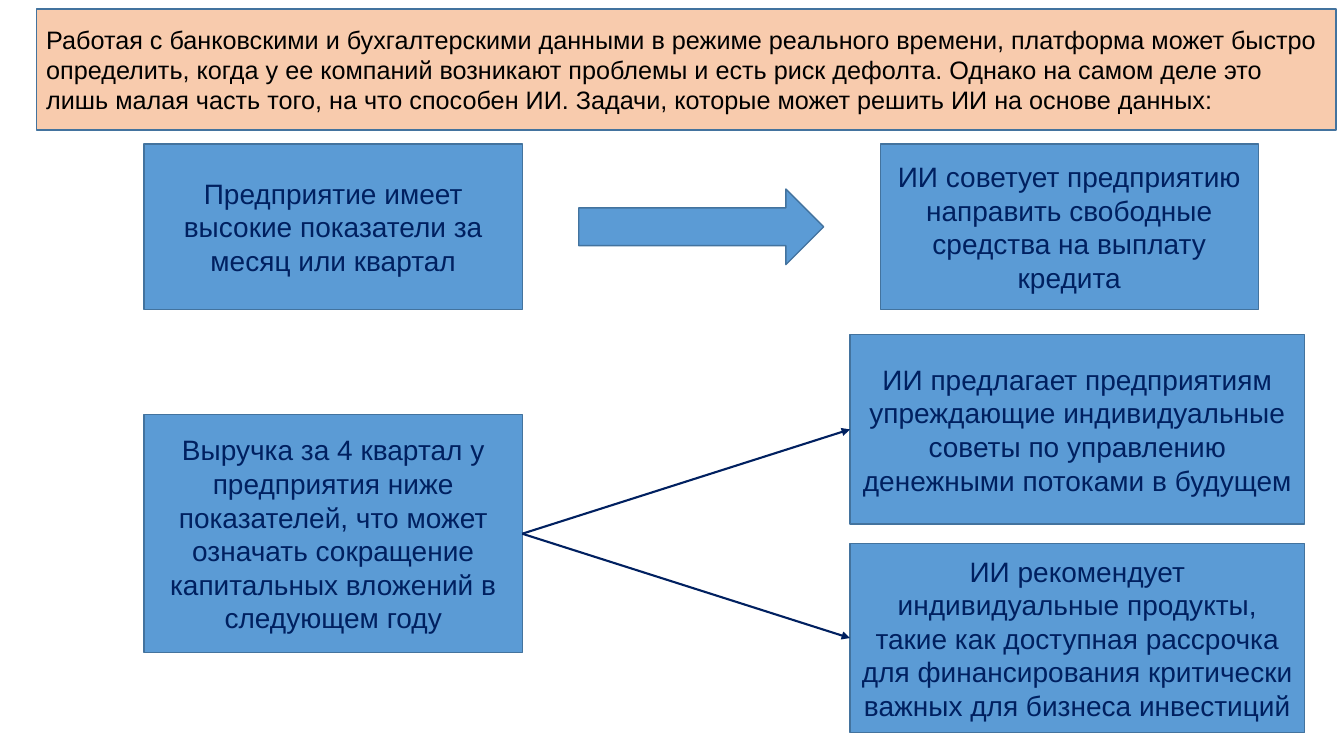
from lxml import etree
from pptx import Presentation
from pptx.dml.color import RGBColor
from pptx.enum.shapes import MSO_CONNECTOR as CONNECTOR, MSO_SHAPE as SHAPE
from pptx.enum.text import MSO_ANCHOR as ANCHOR, PP_ALIGN as ALIGN
from pptx.oxml.ns import qn
from pptx.util import Inches, Pt

BLUE = RGBColor(0x5B, 0x9B, 0xD5)
OUTLINE = RGBColor(0x43, 0x73, 0x9E)
NAVY = RGBColor(0x00, 0x20, 0x60)
PEACH = RGBColor(0xF8, 0xCB, 0xAD)
BLACK = RGBColor(0x00, 0x00, 0x00)

FONT = "Arial"
RIGHT_SIDE, LEFT_SIDE = 3, 1
CAUSE_LEFT = 1.43
CARD_WIDTH = 3.75

INTRO = (
    "Работая с банковскими и бухгалтерскими данными в режиме реального времени, "
    "платформа может быстро определить, когда у ее компаний возникают проблемы "
    "и есть риск дефолта. Однако на самом деле это лишь малая часть того, на что "
    "способен ИИ. Задачи, которые может решить ИИ на основе данных:"
)
HIGH_RESULTS = "Предприятие имеет высокие показатели за месяц или квартал"
REPAY_LOAN = "ИИ советует предприятию направить свободные средства на выплату кредита"
LOW_REVENUE = (
    "Выручка за 4 квартал у предприятия ниже показателей, что может означать "
    "сокращение капитальных вложений в следующем году"
)
LOW_REVENUE_ADVICE = (
    "ИИ предлагает предприятиям упреждающие индивидуальные советы по управлению "
    "денежными потоками в будущем",
    "ИИ рекомендует индивидуальные продукты, такие как доступная рассрочка для "
    "финансирования критически важных для бизнеса инвестиций",
)


def add_filled_shape(slide, kind, left, top, width, height, fill=BLUE):
    shape = slide.shapes.add_shape(
        kind, Inches(left), Inches(top), Inches(width), Inches(height)
    )
    shape.shadow.inherit = False
    shape.fill.solid()
    shape.fill.fore_color.rgb = fill
    shape.line.color.rgb = OUTLINE
    shape.line.width = Pt(1)
    return shape


def write_text(shape, text, size, color, alignment):
    frame = shape.text_frame
    frame.word_wrap = True
    frame.vertical_anchor = ANCHOR.MIDDLE
    paragraph = frame.paragraphs[0]
    paragraph.alignment = alignment
    run = paragraph.add_run()
    run.text = text
    run.font.name = FONT
    run.font.size = Pt(size)
    run.font.color.rgb = color


def add_card(slide, text, left, top, width, height):
    card = add_filled_shape(slide, SHAPE.RECTANGLE, left, top, width, height)
    write_text(card, text, 20, NAVY, ALIGN.CENTER)
    return card


def connect_cards(slide, source, target):
    """Draw an arrow from the source's right side to the target's left side."""
    connector = slide.shapes.add_connector(CONNECTOR.STRAIGHT, 0, 0, 0, 0)
    connector.begin_connect(source, RIGHT_SIDE)
    connector.end_connect(target, LEFT_SIDE)
    connector.line.color.rgb = NAVY
    connector.line.width = Pt(1.5)
    line = connector.line._get_or_add_ln()
    etree.SubElement(line, qn("a:tailEnd"), type="triangle")
    etree.SubElement(connector._element.spPr, qn("a:effectLst"))


def add_intro(slide, left, top, width, height):
    banner = add_filled_shape(slide, SHAPE.RECTANGLE, left, top, width, height, PEACH)
    write_text(banner, INTRO, 18, BLACK, ALIGN.LEFT)


def add_high_results_row(slide, left, top, width, height):
    arrow_width, arrow_height = 2.43, 0.75
    add_card(slide, HIGH_RESULTS, left, top, CARD_WIDTH, height)
    add_filled_shape(
        slide, SHAPE.RIGHT_ARROW, left + CARD_WIDTH + 0.56,
        top + (height - arrow_height) / 2, arrow_width, arrow_height,
    )
    add_card(slide, REPAY_LOAN, left + width - CARD_WIDTH, top, CARD_WIDTH, height)


def add_low_revenue_branch(slide, left, top, width, height):
    cause_height = 2.36
    advice_width, advice_height = 4.51, 1.88
    cause = add_card(
        slide, LOW_REVENUE, left, top + (height - cause_height) / 2,
        CARD_WIDTH, cause_height,
    )
    step = height - advice_height
    for index, text in enumerate(LOW_REVENUE_ADVICE):
        advice = add_card(
            slide, text, left + width - advice_width, top + index * step,
            advice_width, advice_height,
        )
        connect_cards(slide, cause, advice)


def main():
    presentation = Presentation()
    presentation.slide_width = Inches(13.33)
    presentation.slide_height = Inches(7.5)
    slide = presentation.slides.add_slide(presentation.slide_layouts[6])
    add_high_results_row(slide, CAUSE_LEFT, 1.43, 11.05, 1.64)
    add_low_revenue_branch(slide, CAUSE_LEFT, 3.32, 11.51, 3.95)
    add_intro(slide, 0.36, 0.09, 12.89, 1.2)
    presentation.save("out.pptx")


if __name__ == "__main__":
    main()
